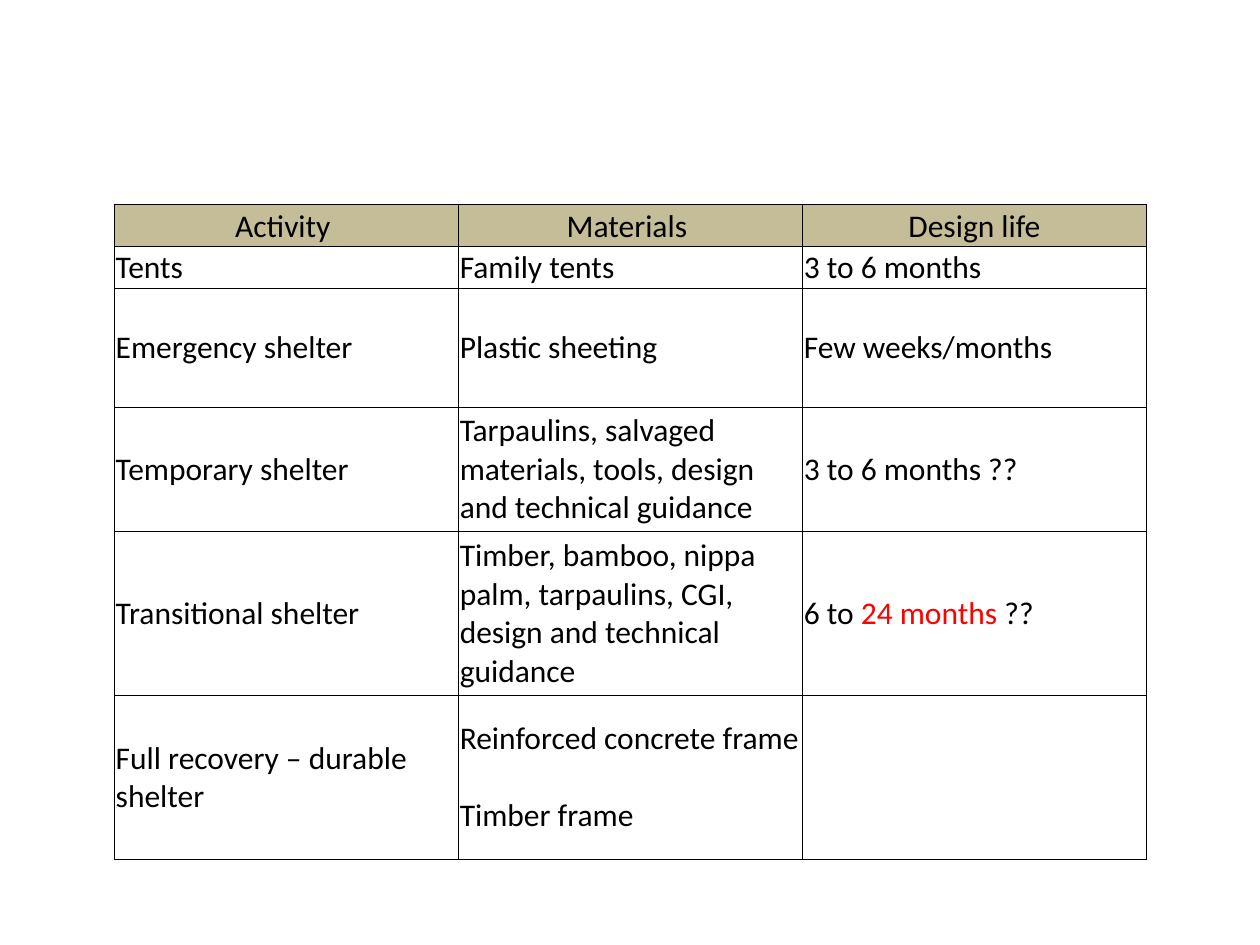
from dataclasses import dataclass
from typing import Optional

from lxml.etree import SubElement
from pptx import Presentation
from pptx.dml.color import RGBColor
from pptx.enum.text import MSO_ANCHOR, PP_ALIGN
from pptx.oxml.ns import qn
from pptx.util import Pt

FONT = "Calibri"
SIZE = 18
LINE_HEIGHT = 22
BLACK = "000000"
RED = "FF0000"
KHAKI = "C4BD97"
LEFT, TOP, COLUMN_WIDTH = 65.4, 117, 196.6


@dataclass
class Run:
    text: str
    color: str = BLACK


Paragraphs = list[list[Run]]


@dataclass
class Row:
    height: float
    cells: list[Paragraphs]
    fill: Optional[str] = None


def rgb(value: str) -> RGBColor:
    return RGBColor.from_string(value)


def plain(*lines: str) -> Paragraphs:
    return [[Run(line)] for line in lines]


def set_borders(cell, color: str, width: float) -> None:
    tcPr = cell._tc.get_or_add_tcPr()
    for side in ("lnL", "lnR", "lnT", "lnB"):
        ln = SubElement(tcPr, qn(f"a:{side}"), w=str(Pt(width)))
        fill = SubElement(ln, qn("a:solidFill"))
        SubElement(fill, qn("a:srgbClr"), val=color)


def write_cell(cell, paragraphs: Paragraphs, header: bool) -> None:
    tf = cell.text_frame
    for i, runs in enumerate(paragraphs):
        p = tf.add_paragraph() if i else tf.paragraphs[0]
        p.alignment = PP_ALIGN.CENTER if header else PP_ALIGN.LEFT
        if i:
            p.space_before = Pt(LINE_HEIGHT)
        for run in runs:
            r = p.add_run()
            r.text = run.text
            r.font.name = FONT
            r.font.size = Pt(SIZE)
            r.font.bold = False
            r.font.color.rgb = rgb(run.color)


def format_cell(cell, fill: Optional[str]) -> None:
    cell.margin_left = cell.margin_right = cell.margin_top = Pt(0.75)
    cell.margin_bottom = Pt(0)
    cell.vertical_anchor = MSO_ANCHOR.BOTTOM if fill else MSO_ANCHOR.MIDDLE
    set_borders(cell, BLACK, 0.5)
    if fill:
        cell.fill.solid()
        cell.fill.fore_color.rgb = rgb(fill)
    else:
        cell.fill.background()


def add_shelter_table(s, rows: list[Row]) -> None:
    columns = len(rows[0].cells)
    frame = s.shapes.add_table(
        len(rows), columns, Pt(LEFT), Pt(TOP),
        Pt(COLUMN_WIDTH * columns), Pt(sum(row.height for row in rows)),
    )
    table = frame.table
    table.first_row = table.horz_banding = False
    for column in table.columns:
        column.width = Pt(COLUMN_WIDTH)
    for i, row in enumerate(rows):
        table.rows[i].height = Pt(row.height)
        for j, paragraphs in enumerate(row.cells):
            cell = table.cell(i, j)
            format_cell(cell, row.fill)
            write_cell(cell, paragraphs, header=row.fill is not None)


ROWS = [
    Row(23.8, [plain("Activity "), plain("Materials "), plain("Design life")], KHAKI),
    Row(23.8, [plain("Tents"), plain("Family tents"), plain("3 to 6 months")]),
    Row(68, [plain("Emergency shelter"), plain("Plastic sheeting"),
             plain("Few weeks/months")]),
    Row(70.9, [plain("Temporary shelter"),
               plain("Tarpaulins, salvaged materials, tools, design and technical guidance"),
               plain("3 to 6 months ??")]),
    Row(93.7, [plain("Transitional shelter"),
               plain("Timber, bamboo, nippa palm, tarpaulins, CGI, "
                     "design and technical guidance"),
               [[Run("6 to "), Run("24 months ", RED), Run("??")]]]),
    Row(93.7, [plain("Full recovery – durable shelter"),
               plain("Reinforced concrete frame", "Timber frame"), []]),
]


def main() -> None:
    prs = Presentation()
    prs.slide_width, prs.slide_height = Pt(720), Pt(540)
    s = prs.slides.add_slide(prs.slide_layouts[6])
    add_shelter_table(s, ROWS)
    prs.save("out.pptx")


if __name__ == "__main__":
    main()
